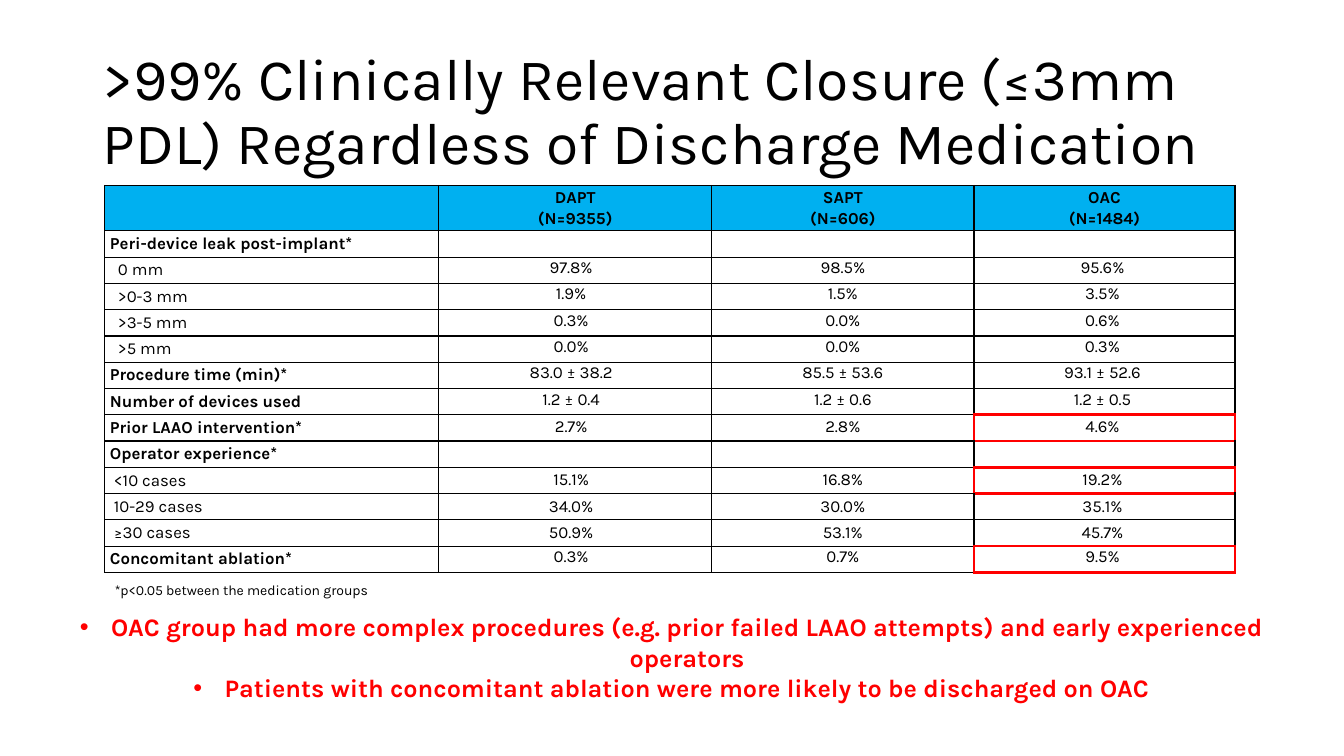
from dataclasses import dataclass

import lxml.etree
import pptx
import pptx.dml.color
import pptx.enum.text
import pptx.oxml.ns
import pptx.util

Inches = pptx.util.Inches
Pt = pptx.util.Pt
ALIGN = pptx.enum.text.PP_ALIGN
ANCHOR = pptx.enum.text.MSO_ANCHOR
qn = pptx.oxml.ns.qn

COLORS = {"black": "000000", "red": "FF0000", "header": "00B0F0"}
FONT = "Karla"


@dataclass
class Row:
    label: str
    values: tuple[str, str, str] = ("", "", "")
    indent: float = 0.05
    bold: bool = True
    inset: float = 0
    highlight: bool = False


@dataclass
class TextBox:
    lines: list[str]
    left: float
    top: float
    width: float
    height: float
    size: float
    color: str = "black"
    bold: bool = False
    align: ALIGN = ALIGN.LEFT
    anchor: ANCHOR = ANCHOR.TOP
    spacing: float = 1.0
    bullet: bool = False


HEADERS = ["", "DAPT\n(N=9355)", "SAPT\n(N=606)", "OAC\n(N=1484)"]
ROWS = [
    Row("Peri-device leak post-implant*"),
    Row("0 mm", ("97.8%", "98.5%", "95.6%"), 0.13, False),
    Row(">0-3 mm", ("1.9%", "1.5%", "3.5%"), 0.13, False),
    Row(">3-5 mm", ("0.3%", "0.0%", "0.6%"), 0.13, False),
    Row(">5 mm", ("0.0%", "0.0%", "0.3%"), 0.13, False),
    Row("Procedure time (min)*", ("83.0 ± 38.2", "85.5 ± 53.6", "93.1 ± 52.6")),
    Row("Number of devices used", ("1.2 ± 0.4", "1.2 ± 0.6", "1.2 ± 0.5")),
    Row("Prior LAAO intervention*", ("2.7%", "2.8%", "4.6%"), inset=0.01, highlight=True),
    Row("Operator experience*"),
    Row("<10 cases", ("15.1%", "16.8%", "19.2%"), 0.09, False, 0.02, True),
    Row("10-29 cases", ("34.0%", "30.0%", "35.1%"), 0.09, False, 0.02),
    Row("≥30 cases", ("50.9%", "53.1%", "45.7%"), 0.09, False, 0.02),
    Row("Concomitant ablation*", ("0.3%", "0.7%", "9.5%"), highlight=True),
]
COL_WIDTHS = [3.31, 2.71, 2.6, 2.59]
RIGHT_INSETS = [0.01, 0.08, 0.0, 0.04]
TABLE_LEFT, TABLE_TOP, TABLE_HEIGHT, HEADER_HEIGHT = 1.04, 1.84, 3.84, 0.45
SIDES = {"lnL": (0, -1), "lnR": (0, 1), "lnT": (-1, 0), "lnB": (1, 0)}
HIGHLIGHTS = {(i, len(COL_WIDTHS) - 1) for i, row in enumerate(ROWS, 1) if row.highlight}

TEXT_BOXES = [
    TextBox([">99% Clinically Relevant Closure (≤3mm PDL) Regardless of Discharge Medication"],
            0.92, 0.4, 11.5, 1.45, 42, anchor=ANCHOR.MIDDLE, spacing=0.9),
    TextBox(["OAC group had more complex procedures (e.g. prior failed LAAO attempts) "
             "and early experienced operators",
             "Patients with concomitant ablation were more likely to be discharged on OAC"],
            0.31, 6.02, 12.7, 0.71, 18, "red", True, ALIGN.CENTER, bullet=True),
    TextBox(["*p<0.05 between the medication groups"], 1.04, 5.72, 12.2, 0.27, 10),
]


def rgb(name: str) -> pptx.dml.color.RGBColor:
    return pptx.dml.color.RGBColor.from_string(COLORS[name])


def write(p, text: str, *, size: float, color: str = "black", bold: bool = False,
          align: ALIGN = ALIGN.LEFT, spacing: float = 1.0, bullet: bool = False) -> None:
    p.text = text
    p.alignment = align
    p.line_spacing = spacing
    if bullet:
        pPr = p._p.get_or_add_pPr()
        pPr.set("marL", str(Inches(0.31)))
        pPr.set("indent", str(-Inches(0.31)))
        lxml.etree.SubElement(pPr, qn("a:buFont"), typeface="Arial")
        lxml.etree.SubElement(pPr, qn("a:buChar"), char="•")
    for r in p.runs:
        r.font.name = FONT
        r.font.size = Pt(size)
        r.font.bold = bold
        r.font.color.rgb = rgb(color)
    if not text:
        lxml.etree.SubElement(p._p, qn("a:endParaRPr"), sz=str(int(size * 100)))


def add_text_box(slide, box: TextBox) -> None:
    sp = slide.shapes.add_textbox(*map(Inches, (box.left, box.top, box.width, box.height)))
    tf = sp.text_frame
    tf.word_wrap = True
    tf.vertical_anchor = box.anchor
    for i, line in enumerate(box.lines):
        p = tf.add_paragraph() if i else tf.paragraphs[0]
        write(p, line, size=box.size, color=box.color, bold=box.bold,
              align=box.align, spacing=box.spacing, bullet=box.bullet)


def set_borders(cell, row: int, col: int) -> None:
    tcPr = cell._tc.get_or_add_tcPr()
    for i, (tag, (dr, dc)) in enumerate(SIDES.items()):
        red = bool(HIGHLIGHTS & {(row, col), (row + dr, col + dc)})
        ln = lxml.etree.Element(qn(f"a:{tag}"), w=str(Pt(2.25 if red else 1)))
        fill = lxml.etree.SubElement(ln, qn("a:solidFill"))
        lxml.etree.SubElement(fill, qn("a:srgbClr"), val=COLORS["red" if red else "black"])
        tcPr.insert(i, ln)


def set_margins(cell, left: float, top: float, right: float, bottom: float) -> None:
    cell.margin_left, cell.margin_top = Inches(left), Inches(top)
    cell.margin_right, cell.margin_bottom = Inches(right), Inches(bottom)


def fill_cell(cell, row: int, col: int) -> None:
    if row == 0:
        cell.fill.solid()
        cell.fill.fore_color.rgb = rgb("header")
        cell.vertical_anchor = ANCHOR.MIDDLE
        set_margins(cell, 0.01, 0.01, 0.01, 0.01)
        text, bold, align, spacing = HEADERS[col], True, ALIGN.CENTER, 1.06
    else:
        item = ROWS[row - 1]
        cell.fill.background()
        if col == 0:
            cell.vertical_anchor = ANCHOR.MIDDLE
            set_margins(cell, item.indent, 0.03, 0.01, 0.03)
            text, bold, align, spacing = item.label, item.bold, ALIGN.LEFT, 1.0
        else:
            set_margins(cell, 0, item.inset, RIGHT_INSETS[col], item.inset)
            text, bold, align, spacing = item.values[col - 1], False, ALIGN.CENTER, 1.06
    write(cell.text_frame.paragraphs[0], text, size=12, bold=bold, align=align, spacing=spacing)
    set_borders(cell, row, col)


def add_results_table(slide) -> None:
    table = slide.shapes.add_table(
        len(ROWS) + 1, len(COL_WIDTHS), Inches(TABLE_LEFT), Inches(TABLE_TOP),
        Inches(sum(COL_WIDTHS)), Inches(TABLE_HEIGHT)).table
    table.first_row = False
    table.horz_banding = False
    for column, width in zip(table.columns, COL_WIDTHS):
        column.width = Inches(width)
    body_height = (TABLE_HEIGHT - HEADER_HEIGHT) / len(ROWS)
    for i, row in enumerate(table.rows):
        row.height = Inches(body_height if i else HEADER_HEIGHT)
        for j, cell in enumerate(row.cells):
            fill_cell(cell, i, j)


def main() -> None:
    prs = pptx.Presentation()
    prs.slide_width, prs.slide_height = Inches(13.33), Inches(7.5)
    slide = prs.slides.add_slide(prs.slide_layouts[6])
    add_results_table(slide)
    for box in TEXT_BOXES:
        add_text_box(slide, box)
    prs.save("out.pptx")


if __name__ == "__main__":
    main()
